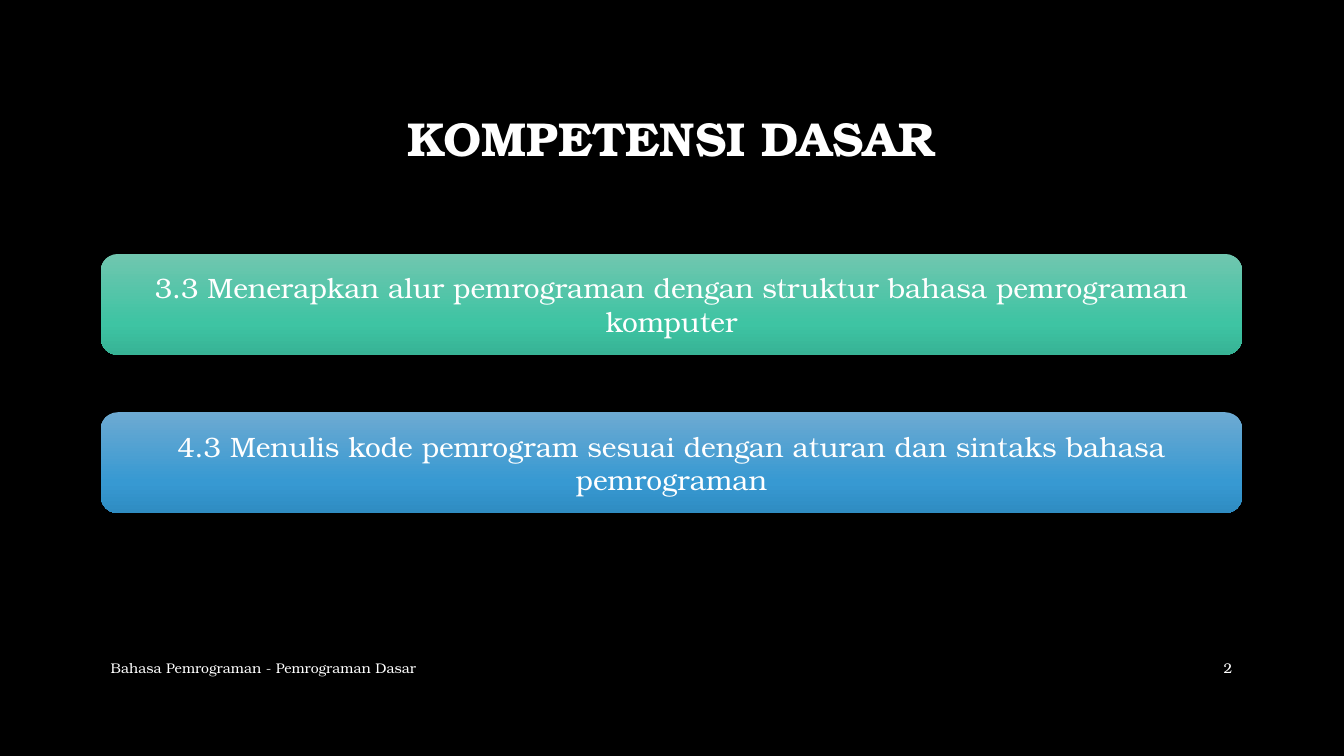
from dataclasses import dataclass

from lxml import etree
from pptx import Presentation
from pptx import util as u
from pptx.dml import color
from pptx.enum import shapes, text
from pptx.oxml import ns

SLIDE_WIDTH, SLIDE_HEIGHT = u.Inches(13.33), u.Inches(7.5)
COLUMNS, ROWS = 13.33, 7.5


@dataclass(frozen=True)
class Theme:
    font: str = "TeX Gyre Bonum"
    background: str = "000000"
    ink: str = "FFFFFF"
    green: tuple[str, ...] = ("70C6AF", "3EC4A3", "37B395")
    blue: tuple[str, ...] = ("6DAAD2", "3799D2", "2F8CC2")
    gradient_stops: tuple[int, ...] = (0, 69, 100)
    title_size: int = 34
    card_size: int = 20
    footer_size: int = 10


@dataclass(frozen=True)
class Area:
    column: float
    row: float
    columns: float
    rows: float

    def box(self) -> tuple[int, int, int, int]:
        """Left, top, width and height on the slide."""
        return (
            int(SLIDE_WIDTH * self.column / COLUMNS),
            int(SLIDE_HEIGHT * self.row / ROWS),
            int(SLIDE_WIDTH * self.columns / COLUMNS),
            int(SLIDE_HEIGHT * self.rows / ROWS),
        )


@dataclass(frozen=True)
class Label:
    words: str
    area: Area
    size: int
    align: text.PP_ALIGN
    bold: bool = False
    line_spacing: float = 1.0


@dataclass(frozen=True)
class Card:
    words: str
    colours: tuple[str, ...]


THEME = Theme()
LEFT, WIDTH = 1, 11.32
CARD_TOP, CARD_HEIGHT, CARD_PITCH = 2.52, 1, 1.57
FOOTER_TOP, FOOTER_HEIGHT = 6.43, 0.4

LABELS = (
    Label("KOMPETENSI DASAR", Area(LEFT, 0.67, WIDTH, 1.45), THEME.title_size,
          text.PP_ALIGN.CENTER, bold=True, line_spacing=0.9),
    Label("Bahasa Pemrograman - Pemrograman Dasar",
          Area(LEFT, FOOTER_TOP, 7.3, FOOTER_HEIGHT), THEME.footer_size, text.PP_ALIGN.LEFT),
    Label("2", Area(11.5, FOOTER_TOP, 0.82, FOOTER_HEIGHT), THEME.footer_size,
          text.PP_ALIGN.RIGHT),
)
CARDS = (
    Card("3.3 Menerapkan alur pemrograman dengan struktur bahasa pemrograman komputer",
         THEME.green),
    Card("4.3 Menulis kode pemrogram sesuai dengan aturan dan sintaks bahasa pemrograman",
         THEME.blue),
)


def write_text(shape, label: Label) -> None:
    frame = shape.text_frame
    frame.word_wrap = True
    frame.vertical_anchor = text.MSO_ANCHOR.MIDDLE
    paragraph = frame.paragraphs[0]
    paragraph.alignment = label.align
    paragraph.line_spacing = label.line_spacing
    run = paragraph.add_run()
    run.text = label.words
    run.font.name = THEME.font
    run.font.size = u.Pt(label.size)
    run.font.bold = label.bold
    run.font.color.rgb = color.RGBColor.from_string(THEME.ink)


def fill_gradient(shape, colours: tuple[str, ...]) -> None:
    """Fill from top to bottom with one colour per theme stop."""
    shape.fill.gradient()
    shape.fill.gradient_angle = 270
    stops = shape._element.spPr.find(ns.qn("a:gradFill")).find(ns.qn("a:gsLst"))
    for old_stop in list(stops):
        stops.remove(old_stop)
    for position, colour in zip(THEME.gradient_stops, colours):
        stop = etree.SubElement(stops, ns.qn("a:gs"), pos=str(position * 1000))
        etree.SubElement(stop, ns.qn("a:srgbClr"), val=colour)


def add_label(slide, label: Label) -> None:
    write_text(slide.shapes.add_textbox(*label.area.box()), label)


def add_card(slide, card: Card, index: int) -> None:
    area = Area(LEFT, CARD_TOP + index * CARD_PITCH, WIDTH, CARD_HEIGHT)
    shape = slide.shapes.add_shape(shapes.MSO_SHAPE.ROUNDED_RECTANGLE, *area.box())
    shape.shadow.inherit = False
    shape.line.fill.background()
    fill_gradient(shape, card.colours)
    write_text(shape, Label(card.words, area, THEME.card_size, text.PP_ALIGN.CENTER))


def main() -> None:
    presentation = Presentation()
    presentation.slide_width, presentation.slide_height = SLIDE_WIDTH, SLIDE_HEIGHT
    slide = presentation.slides.add_slide(presentation.slide_layouts[6])
    background = slide.background.fill
    background.solid()
    background.fore_color.rgb = color.RGBColor.from_string(THEME.background)
    for label in LABELS:
        add_label(slide, label)
    for index, card in enumerate(CARDS):
        add_card(slide, card, index)
    presentation.save("out.pptx")


if __name__ == "__main__":
    main()
